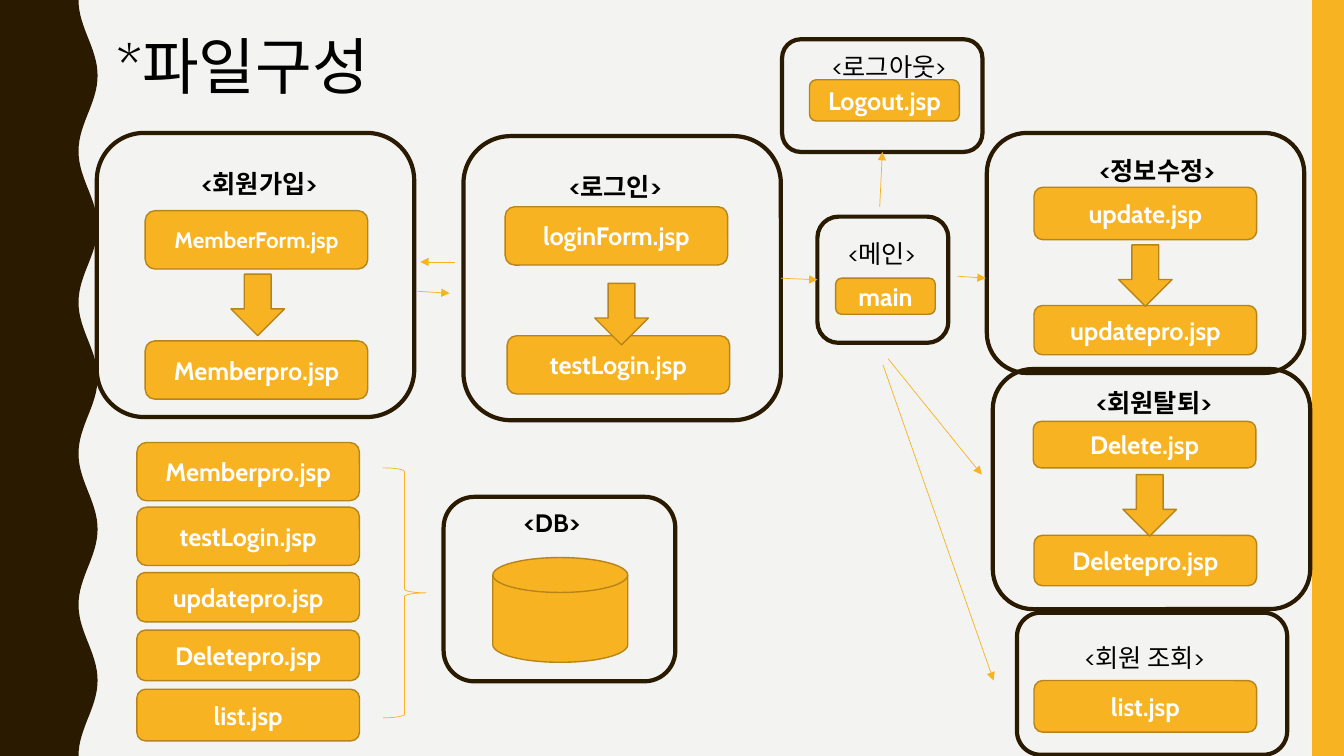
import math

from lxml import etree
from pptx import Presentation
from pptx.dml.color import RGBColor
from pptx.enum.shapes import MSO_CONNECTOR, MSO_SHAPE
from pptx.enum.text import MSO_ANCHOR, MSO_AUTO_SIZE, PP_ALIGN
from pptx.oxml.ns import qn
from pptx.util import Cm, Pt

RECT, ROUNDED = MSO_SHAPE.RECTANGLE, MSO_SHAPE.ROUNDED_RECTANGLE
DOWN_ARROW, BRACE = MSO_SHAPE.DOWN_ARROW, MSO_SHAPE.RIGHT_BRACE
DISK = MSO_SHAPE.FLOWCHART_MAGNETIC_DISK
STRAIGHT = MSO_CONNECTOR.STRAIGHT
LEFT, CENTER = PP_ALIGN.LEFT, PP_ALIGN.CENTER
TOP, MIDDLE = MSO_ANCHOR.TOP, MSO_ANCHOR.MIDDLE
NO_AUTOSIZE = MSO_AUTO_SIZE.NONE
TITLE_ONLY = 5

WIDTH, HEIGHT = 33.87, 19.05
BUTTON_WIDTH = 5.61
BACKGROUND, BROWN, AMBER, OCHRE = "F3F3F2", "2A1A00", "F8B323", "B7841A"
BLACK, WHITE = "000000", "FFFFFF"

# Card: name, box, label (text, x, y, bold),
# buttons (text, x, y, width, height, size), down arrow position
CARDS = [
    ("join", (2.44, 3.35, 8, 7.16), ("<회원가입>", 4.83, 4.11, True),
     [("MemberForm.jsp", 3.66, 5.31, BUTTON_WIDTH, 1.47, 16),
      ("Memberpro.jsp", 3.66, 8.59, BUTTON_WIDTH, 1.47, 18)], (5.82, 6.91)),
    ("login", (11.68, 3.43, 8, 7.16), ("<로그인>", 14.1, 4.19, True),
     [("loginForm.jsp", 12.73, 5.21, BUTTON_WIDTH, 1.47, 18),
      ("testLogin.jsp", 12.78, 8.46, BUTTON_WIDTH, 1.47, 18)], (14.99, 7.14)),
    ("update", (24.87, 3.35, 8, 6.05), ("<정보수정>", 27.46, 3.78, True),
     [("update.jsp", 26.06, 4.72, BUTTON_WIDTH, 1.32, 18),
      ("updatepro.jsp", 26.06, 7.7, BUTTON_WIDTH, 1.24, 18)], (28.19, 6.17)),
    ("delete", (25.02, 9.3, 8, 6.05), ("<회원탈퇴>", 27.38, 9.63, True),
     [("Delete.jsp", 26.04, 10.62, BUTTON_WIDTH, 1.17, 18),
      ("Deletepro.jsp", 26.06, 13.49, BUTTON_WIDTH, 1.27, 18)], (28.3, 11.96)),
    ("main", (20.6, 5.46, 3.3, 3.18), ("<메인>", 21.13, 5.87, False),
     [("main", 21.06, 7.01, 2.51, 0.91, 18)], None),
    ("list", (25.63, 15.44, 6.81, 3.58), ("<회원 조회>", 27.1, 16.05, False),
     [("list.jsp", 26.06, 17.15, BUTTON_WIDTH, 1.3, 18)], None),
    ("logout", (19.71, 0.99, 5.05, 2.84), ("<로그아웃>", 20.73, 1.17, False),
     [("Logout.jsp", 20.4, 2.01, 3.78, 1.04, 18)], None),
    ("db", (11.18, 12.52, 5.84, 4.65), ("<DB>", 12.95, 12.67, True), [], None),
]

# Pages that use the database: text, top, height
DB_PAGES = [
    ("Memberpro.jsp", 11.15, 1.47),
    ("testLogin.jsp", 12.78, 1.47),
    ("updatepro.jsp", 14.43, 1.24),
    ("Deletepro.jsp", 15.88, 1.27),
    ("list.jsp", 17.37, 1.3),
]

# Flow: from, to, joined card side at the start, joined card side at the end
FLOWS = [
    ((22.17, 5.21), (22.2, 3.94), None, ("logout", 2)),
    ((19.76, 6.91), (20.5, 6.93), ("login", 3), ("main", 1)),
    ((24.13, 6.96), (24.84, 7.01), None, None),
    ((11.46, 6.6), (10.59, 6.6), None, None),
    ((10.52, 7.34), (11.33, 7.39), None, None),
    ((22.38, 9.04), (24.74, 11.96), None, None),
    ((22.25, 9.19), (25.04, 17.15), None, None),
]


def rgb(code):
    return RGBColor.from_string(code)


class FlowSlide:
    font = "Cabin"

    def __init__(self, slide):
        self.slide = slide
        self.shapes = slide.shapes
        slide.background.fill.solid()
        slide.background.fill.fore_color.rgb = rgb(BACKGROUND)

    def paint(self, shape, fill=None, line=None, weight=1):
        shape.shadow.inherit = False
        if fill:
            shape.fill.solid()
            shape.fill.fore_color.rgb = rgb(fill)
        else:
            shape.fill.background()
        if line:
            shape.line.color.rgb = rgb(line)
            shape.line.width = Pt(weight)
        else:
            shape.line.fill.background()

    def set_text(self, shape, text, size, color, bold, align, anchor):
        frame = shape.text_frame
        frame.word_wrap = True
        frame.auto_size = NO_AUTOSIZE
        frame.vertical_anchor = anchor
        paragraph = frame.paragraphs[0]
        paragraph.alignment = align
        run = paragraph.add_run()
        run.text = text
        run.font.name = self.font
        run.font.size = Pt(size)
        run.font.bold = bold
        run.font.color.rgb = rgb(color)

    def shape(self, kind, x, y, width, height, fill=None, line=None, weight=1):
        shape = self.shapes.add_shape(kind, Cm(x), Cm(y), Cm(width), Cm(height))
        self.paint(shape, fill, line, weight)
        return shape

    def title(self, text, x, y, width, height):
        title = self.shapes.title
        title.left, title.top = Cm(x), Cm(y)
        title.width, title.height = Cm(width), Cm(height)
        self.set_text(title, text, 44, BLACK, False, LEFT, TOP)

    def label(self, text, x, y, bold):
        label = self.shapes.add_textbox(Cm(x), Cm(y), Cm(BUTTON_WIDTH), Cm(1.02))
        self.set_text(label, text, 18, BLACK, bold, LEFT, TOP)

    def button(self, text, x, y, width, height, size=18):
        button = self.shape(ROUNDED, x, y, width, height, AMBER, OCHRE)
        self.set_text(button, text, size, WHITE, True, CENTER, MIDDLE)

    def wave(self, middle, swing, period):
        steps = 150
        edge = []
        for step in range(steps + 1):
            y = HEIGHT * step / steps
            x = middle - swing * math.cos(2 * math.pi * y / period)
            edge.append((Cm(x), Cm(y)))
        builder = self.shapes.build_freeform(0, 0)
        builder.add_line_segments(edge + [(0, Cm(HEIGHT))], close=True)
        self.paint(builder.convert_to_shape(), BROWN)

    def flow(self, start, end, start_join, end_join):
        points = [Cm(value) for value in start + end]
        flow = self.shapes.add_connector(STRAIGHT, *points)
        if start_join:
            flow.begin_connect(*start_join)
        if end_join:
            flow.end_connect(*end_join)
        flow.line.color.rgb = rgb(AMBER)
        flow.line.width = Pt(0.5)
        properties = flow._element.spPr
        etree.SubElement(properties.get_or_add_ln(), qn("a:tailEnd"), type="triangle")
        etree.SubElement(properties, qn("a:effectLst"))


def main():
    presentation = Presentation()
    presentation.slide_width, presentation.slide_height = Cm(WIDTH), Cm(HEIGHT)
    layout = presentation.slide_layouts[TITLE_ONLY]
    page = FlowSlide(presentation.slides.add_slide(layout))

    # Side bands and title
    page.wave(2.22, 0.24, 3.81)
    page.shape(RECT, 33.07, 0, 0.8, HEIGHT, AMBER)
    page.title("*파일구성", 2.67, 0.58, 12.88, 2.13)

    # Cards with their pages
    cards = {}
    for name, box, label, buttons, arrow in CARDS:
        cards[name] = page.shape(ROUNDED, *box, line=BROWN, weight=3)
        page.label(*label)
        for button in buttons:
            page.button(*button)
        if arrow:
            page.shape(DOWN_ARROW, *arrow, 1.35, 1.55, AMBER, OCHRE)

    # Database and the pages that use it
    page.shape(DISK, 12.42, 14.05, 3.4, 2.64, AMBER, OCHRE)
    for text, top, height in DB_PAGES:
        page.button(text, 3.45, top, BUTTON_WIDTH, height)
    page.shape(BRACE, 9.65, 11.79, 1.09, 6.3, line=AMBER, weight=0.5)

    # Flows between cards
    for start, end, *joins in FLOWS:
        sides = [(cards[join[0]], join[1]) if join else None for join in joins]
        page.flow(start, end, *sides)

    presentation.save("out.pptx")


if __name__ == "__main__":
    main()
